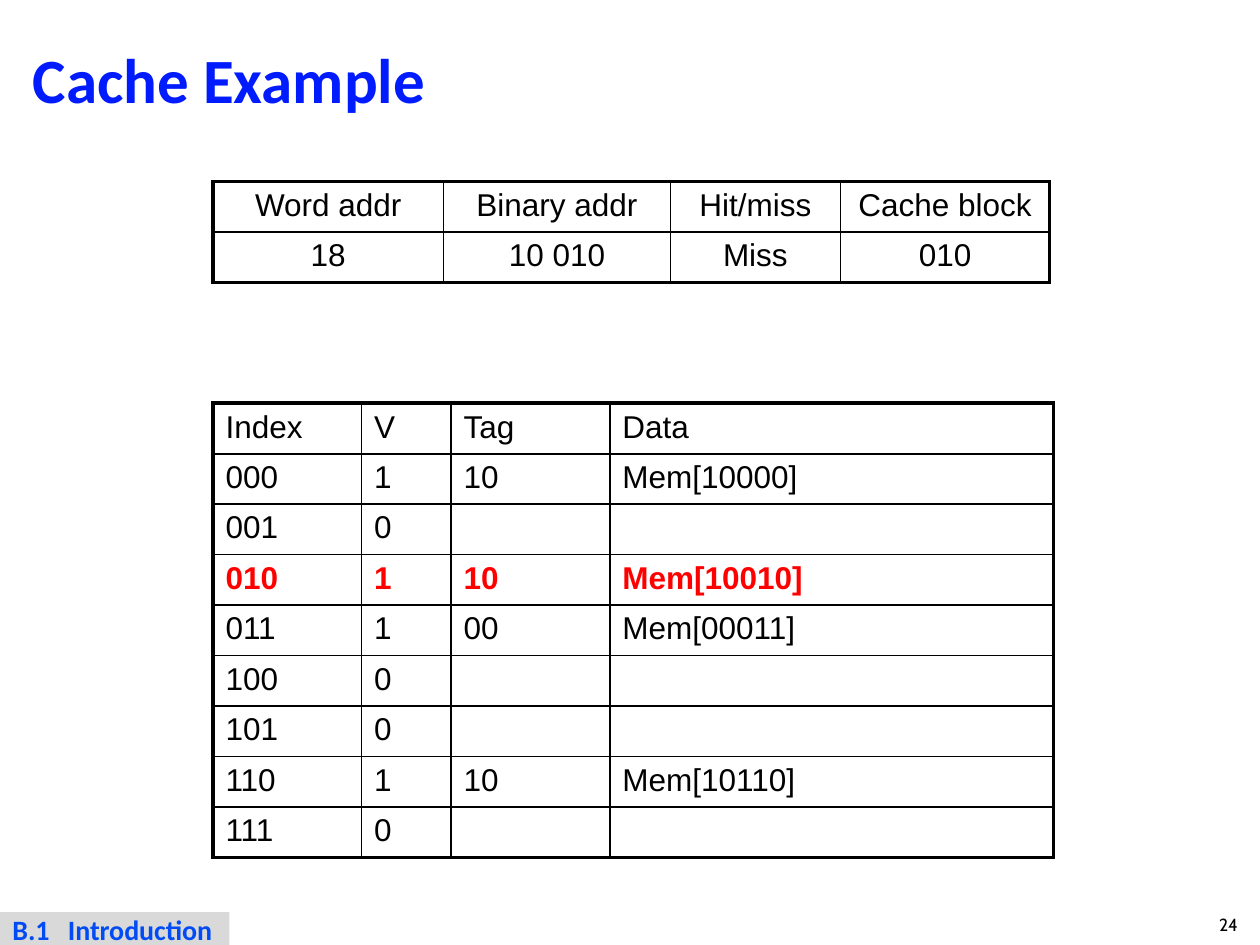
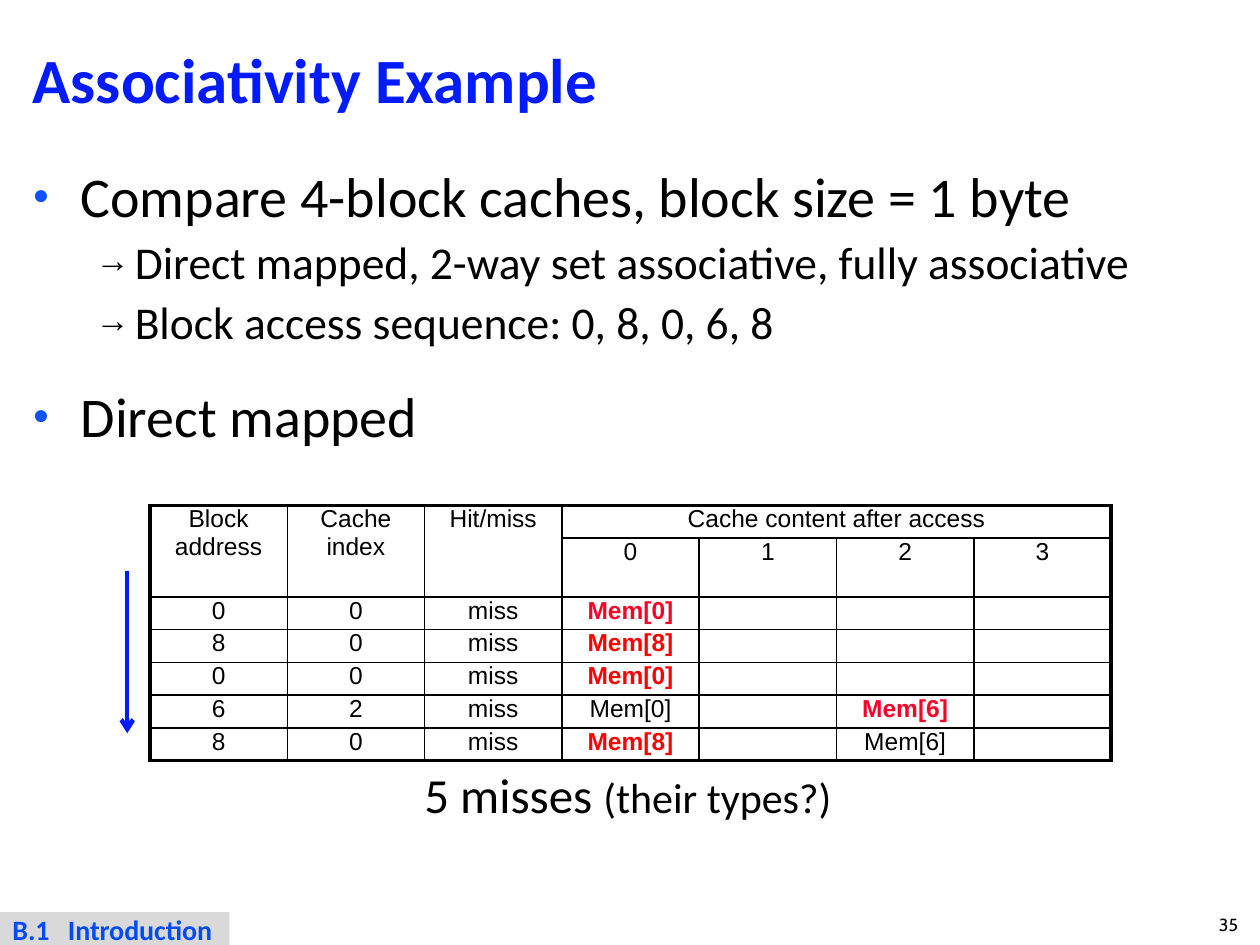
from dataclasses import dataclass
from typing import NamedTuple

from lxml.etree import SubElement
from pptx import Presentation
from pptx.dml.color import RGBColor
from pptx.enum.shapes import MSO_CONNECTOR as Connector, MSO_SHAPE as Shape
from pptx.enum.text import MSO_ANCHOR as Anchor, MSO_AUTO_SIZE as AutoSize, PP_ALIGN as Align
from pptx.oxml.ns import qn
from pptx.util import Inches, Pt


@dataclass(frozen=True)
class Theme:
    text_font: str = "Calibri"
    table_font: str = "Arial"
    number_font: str = "Cabin"
    black: str = "000000"
    white: str = "FFFFFF"
    blue: str = "001CFE"
    section_blue: str = "004BF3"
    bullet_blue: str = "0B52FC"
    band_grey: str = "D9D9D9"
    red: str = "FF0000"
    crimson: str = "FC0128"
    title_size: float = 36
    topic_size: float = 32
    detail_size: float = 26
    summary_size: float = 28
    aside_size: float = 24
    cache_size: float = 18
    trace_size: float = 14
    section_size: float = 16
    number_size: float = 10
    outer_line: float = 2.25
    header_line: float = 1.5
    inner_line: float = 1
    arrow_line: float = 2.5


class Box(NamedTuple):
    """Region of a slide in inches."""
    left: float
    top: float
    width: float
    height: float

    def emu(self):
        return [Inches(length) for length in self]


THEME = Theme()
PAGE = Box(0, 0, 10, 7.5)
TITLE_BOX = Box(0.16, 0.16, 9.68, 1.01)
BODY_BOX = Box(0.16, 1.23, 9.68, 5.95)
LOOKUP_BOX = Box(1.69, 1.44, 6.64, 0.8)
CACHE_BOX = Box(1.69, 3.2, 6.67, 3.6)
TRACE_BOX = Box(1.19, 4.01, 7.63, 1.82)

LOOKUP = [
    ["Word addr", "Binary addr", "Hit/miss", "Cache block"],
    ["18", "10 010", "Miss", "010"],
]
CACHE = [
    ["Index", "V", "Tag", "Data"],
    ["000", "1", "10", "Mem[10000]"],
    ["001", "0", "", ""],
    ["010", "1", "10", "Mem[10010]"],
    ["011", "1", "00", "Mem[00011]"],
    ["100", "0", "", ""],
    ["101", "0", "", ""],
    ["110", "1", "10", "Mem[10110]"],
    ["111", "0", "", ""],
]
LOADED_ROW = 3
TRACE = [
    ["Block address", "Cache index", "Hit/miss", "Cache content after access", "", "", ""],
    ["", "", "", "0", "1", "2", "3"],
    ["0", "0", "miss", "Mem[0]", "", "", ""],
    ["8", "0", "miss", "Mem[8]", "", "", ""],
    ["0", "0", "miss", "Mem[0]", "", "", ""],
    ["6", "2", "miss", "Mem[0]", "", "Mem[6]", ""],
    ["8", "0", "miss", "Mem[8]", "", "Mem[6]", ""],
]
TRACE_MERGES = [((0, col), (1, col)) for col in range(3)] + [((0, 3), (0, 6))]
TRACE_LOADS = {(2, 3): THEME.crimson, (3, 3): THEME.red, (4, 3): THEME.red,
               (5, 5): THEME.crimson, (6, 3): THEME.red}
TOPICS = [
    (0, "Compare 4-block caches, block size = 1 byte"),
    (1, "Direct mapped, 2-way set associative, fully associative"),
    (1, "Block access sequence: 0, 8, 0, 6, 8"),
    (0, "Direct mapped"),
]


def rgb(color):
    return RGBColor.from_string(color)


def style_runs(paragraph, font, size, color=THEME.black, bold=False):
    for run in paragraph.runs:
        run.font.name = font
        run.font.size = Pt(size)
        run.font.color.rgb = rgb(color)
        run.font.bold = bold


def set_margins(frame, side, edge):
    frame.margin_left = frame.margin_right = Inches(side)
    frame.margin_top = frame.margin_bottom = Inches(edge)


def place(shape, box):
    shape.left, shape.top, shape.width, shape.height = box.emu()


def add_title(slide, title, box):
    heading = slide.shapes.title
    place(heading, box)
    heading.fill.solid()
    heading.fill.fore_color.rgb = rgb(THEME.white)
    frame = heading.text_frame
    frame.text = title
    frame.auto_size = AutoSize.NONE
    frame.vertical_anchor = Anchor.MIDDLE
    paragraph = frame.paragraphs[0]
    paragraph.alignment = Align.LEFT
    paragraph.line_spacing = 0.87
    style_runs(paragraph, THEME.text_font, THEME.title_size, THEME.blue, True)


def add_footer(slide, number, page):
    """Section band at the bottom left and page number at the bottom right."""
    bottom, right = page.top + page.height, page.left + page.width
    number_box = slide.shapes.add_textbox(*Box(right - 0.5, bottom - 0.33, 0.5, 0.33).emu())
    frame = number_box.text_frame
    frame.word_wrap = True
    frame.vertical_anchor = Anchor.MIDDLE
    frame.text = str(number)
    frame.paragraphs[0].alignment = Align.CENTER
    style_runs(frame.paragraphs[0], THEME.number_font, THEME.number_size)

    band = slide.shapes.add_shape(Shape.RECTANGLE,
                                  *Box(page.left, bottom - 0.26, 1.82, 0.27).emu())
    band.shadow.inherit = False
    band.fill.solid()
    band.fill.fore_color.rgb = rgb(THEME.band_grey)
    band.line.fill.background()
    frame = band.text_frame
    set_margins(frame, 0.1, 0)
    frame.margin_right = 0
    frame.word_wrap = True
    frame.vertical_anchor = Anchor.MIDDLE
    frame.text = "B.1\tIntroduction"
    section = frame.paragraphs[0]
    section.alignment = Align.LEFT
    tabs = SubElement(section._p.get_or_add_pPr(), qn("a:tabLst"))
    SubElement(tabs, qn("a:tab"), pos=str(Inches(0.44)), algn="l")
    style_runs(section, THEME.text_font, THEME.section_size, THEME.section_blue, True)


def set_bullet(paragraph, left, hang, char, color, percent):
    props = paragraph._p.get_or_add_pPr()
    props.set("marL", str(Inches(left)))
    props.set("indent", str(-Inches(hang)))
    bullet_color = SubElement(props, qn("a:buClr"))
    SubElement(bullet_color, qn("a:srgbClr"), val=color)
    SubElement(props, qn("a:buSzPct"), val=str(percent * 1000))
    SubElement(props, qn("a:buFont"), typeface="Arial")
    SubElement(props, qn("a:buChar"), char=char)


def add_topics(slide, topics, box):
    body = slide.placeholders[1]
    place(body, box)
    frame = body.text_frame
    frame.text = "\n".join(text for _, text in topics)
    frame.auto_size = AutoSize.NONE
    for index, (paragraph, (level, _)) in enumerate(zip(frame.paragraphs, topics)):
        paragraph.level = level
        new_topic = index > 0 and level == 0
        paragraph.space_before = Pt(16 if new_topic else 0)
        paragraph.space_after = Pt(3)
        if level:
            set_bullet(paragraph, 0.81, 0.31, "→", THEME.black, 75)
        else:
            set_bullet(paragraph, 0.38, 0.38, "●", THEME.bullet_blue, 50)
        style_runs(paragraph, THEME.text_font, THEME.detail_size if level else THEME.topic_size)


def set_borders(cell, widths):
    props = cell._tc.get_or_add_tcPr()
    for side, width in zip("LRTB", widths):
        line = SubElement(props, qn(f"a:ln{side}"), w=str(Pt(width)))
        SubElement(SubElement(line, qn("a:solidFill")), qn("a:srgbClr"), val=THEME.black)


def add_grid(slide, rows, box, columns, size, align=Align.CENTER, edge=0.05,
             header_line=THEME.inner_line, merges=(), accents=None):
    """Table with a heavy outline; accents maps (row, column) to a bold colour."""
    last_row, last_col = len(rows), len(columns)
    table = slide.shapes.add_table(last_row, last_col, *box.emu()).table
    table.first_row = table.horz_banding = False
    for column, width in zip(table.columns, columns):
        column.width = Inches(width)
    for row in table.rows:
        row.height = Inches(box.height / last_row)
    for start, end in merges:
        table.cell(*start).merge(table.cell(*end))

    def row_line(r):
        return (THEME.outer_line if r in (0, last_row)
                else header_line if r == 1 else THEME.inner_line)

    def col_line(c):
        return THEME.outer_line if c in (0, last_col) else THEME.inner_line

    for r, values in enumerate(rows):
        for c, value in enumerate(values):
            cell = table.cell(r, c)
            wide = cell.span_width if cell.is_merge_origin else 1
            tall = cell.span_height if cell.is_merge_origin else 1
            set_borders(cell, (col_line(c), col_line(c + wide), row_line(r), row_line(r + tall)))
            cell.fill.background()
            set_margins(cell, 0.1, edge)
            paragraph = cell.text_frame.paragraphs[0]
            paragraph.alignment = align
            if value:
                paragraph.text = value
                accent = (accents or {}).get((r, c))
                style_runs(paragraph, THEME.table_font, size, accent or THEME.black, bool(accent))
            else:
                SubElement(paragraph._p, qn("a:endParaRPr"), sz=str(size * 100))


def add_time_arrow(slide, table_box):
    x = Inches(table_box.left - 0.18)
    arrow = slide.shapes.add_connector(Connector.STRAIGHT, x, Inches(table_box.top + 0.52),
                                       x, Inches(table_box.top + 1.81))
    arrow.line.color.rgb = rgb(THEME.blue)
    arrow.line.width = Pt(THEME.arrow_line)
    SubElement(arrow.line._get_or_add_ln(), qn("a:tailEnd"), type="arrow")
    SubElement(arrow._element.spPr, qn("a:effectLst"))


def add_miss_summary(slide, table_box):
    summary = slide.shapes.add_textbox(
        *Box(table_box.left + 2.08, table_box.top + 2.01, 3.47, 0.57).emu())
    summary.text_frame.word_wrap = False
    paragraph = summary.text_frame.paragraphs[0]
    for text in ("5 misses ", "(their types?)"):
        paragraph.add_run().text = text
    style_runs(paragraph, THEME.text_font, THEME.summary_size)
    paragraph.runs[1].font.size = Pt(THEME.aside_size)


def start_slide(deck, layout, title, number):
    slide = deck.slides.add_slide(deck.slide_layouts.get_by_name(layout))
    add_title(slide, title, TITLE_BOX)
    add_footer(slide, number, PAGE)
    return slide


def build_cache_slide(deck):
    slide = start_slide(deck, "Title Only", "Cache Example", 24)
    add_grid(slide, CACHE, CACHE_BOX, [1.18, 0.71, 1.26, 3.52], THEME.cache_size, Align.LEFT,
             header_line=THEME.header_line,
             accents={(LOADED_ROW, col): THEME.red for col in range(4)})
    add_grid(slide, LOOKUP, LOOKUP_BOX, [1.83, 1.8, 1.35, 1.66], THEME.cache_size,
             header_line=THEME.header_line)


def build_associativity_slide(deck):
    slide = start_slide(deck, "Title and Content", "Associativity Example", 35)
    add_topics(slide, TOPICS, BODY_BOX)
    add_grid(slide, TRACE, TRACE_BOX, [1.09] * 7, THEME.trace_size, edge=0,
             merges=TRACE_MERGES, accents=TRACE_LOADS)
    add_miss_summary(slide, TRACE_BOX)
    add_time_arrow(slide, TRACE_BOX)


def main():
    deck = Presentation()
    deck.slide_width, deck.slide_height = Inches(PAGE.width), Inches(PAGE.height)
    build_cache_slide(deck)
    build_associativity_slide(deck)
    deck.save("out.pptx")


if __name__ == "__main__":
    main()
